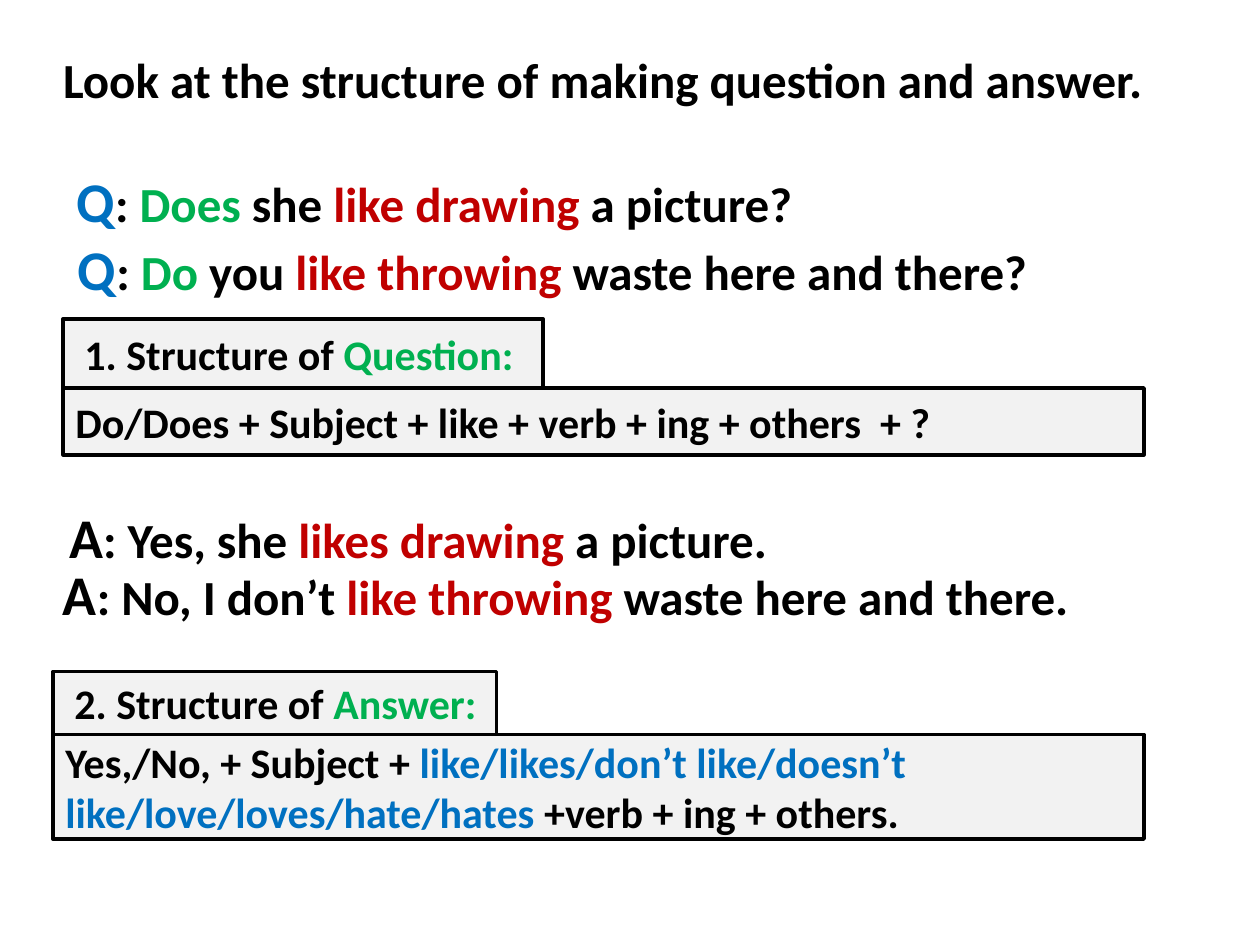
from pptx import Presentation
from pptx.dml.color import RGBColor
from pptx.enum.shapes import MSO_SHAPE
from pptx.enum.text import MSO_ANCHOR, MSO_AUTO_SIZE, PP_ALIGN
from pptx.util import Inches, Pt

FONT = "Calibri"
BLACK, GREEN, RED, BLUE, PALE = "000000", "00B050", "C00000", "0070C0", "F2F2F2"
LETTER_SIZE, SENTENCE_SIZE, RULE_SIZE = 32, 28, 24
INSET, HEADING_INSET = 0.1, 0.17
RIGHT_EDGE = 9.08


def color(hex_code):
    return RGBColor.from_string(hex_code)


def write(box, spans, inset=INSET):
    """Fill a box with one line of (text, size, colour) spans."""
    frame = box.text_frame
    frame.word_wrap = True
    frame.auto_size = MSO_AUTO_SIZE.NONE
    frame.vertical_anchor = MSO_ANCHOR.MIDDLE
    frame.margin_left = Inches(inset)
    para = frame.paragraphs[0]
    para.alignment = PP_ALIGN.LEFT
    for text, size, hex_code in spans:
        span = para.add_run()
        span.text = text
        span.font.name = FONT
        span.font.size = Pt(size)
        span.font.bold = True
        span.font.color.rgb = color(hex_code)


def add_title(page, text):
    title = page.shapes.title
    title.left, title.top = Inches(0.4), Inches(0.17)
    title.width, title.height = Inches(9.19), Inches(0.92)
    write(title, [(text, SENTENCE_SIZE, BLACK)])


def add_sentence(page, left, top, height, letter, letter_color, parts):
    """Add an example sentence that opens with a larger letter."""
    box = page.shapes.add_textbox(
        Inches(left), Inches(top), Inches(8.42), Inches(height))
    write(box, [(letter, LETTER_SIZE, letter_color)]
          + [(text, SENTENCE_SIZE, shade) for text, shade in parts])


def add_panel(page, left, top, width, height, parts, inset=INSET):
    panel = page.shapes.add_shape(
        MSO_SHAPE.RECTANGLE,
        Inches(left), Inches(top), Inches(width), Inches(height))
    panel.shadow.inherit = False
    panel.fill.solid()
    panel.fill.fore_color.rgb = color(PALE)
    panel.line.color.rgb = color(BLACK)
    panel.line.width = Pt(2)
    write(panel, [(text, RULE_SIZE, shade) for text, shade in parts], inset)


def add_rule(page, left, top, heading_size, rule_height, heading, rule):
    """Add a heading panel with the full-width rule panel right below it."""
    width, height = heading_size
    add_panel(page, left, top, width, height, heading, HEADING_INSET)
    add_panel(page, left, top + height, RIGHT_EDGE - left, rule_height, rule)


def main():
    deck = Presentation()
    deck.slide_width, deck.slide_height = Inches(10), Inches(7.5)
    page = deck.slides.add_slide(deck.slide_layouts[5])

    add_title(page, "Look at the structure of making question and answer.")

    add_sentence(page, 0.51, 1.25, 0.67, "Q", BLUE, [
        (": ", BLACK), ("Does", GREEN), (" she ", BLACK),
        ("like drawing ", RED), ("a picture?", BLACK)])
    add_sentence(page, 0.52, 1.83, 0.59, "Q", BLUE, [
        (": ", BLACK), ("Do", GREEN), (" you ", BLACK),
        ("like throwing ", RED), ("waste here and there?", BLACK)])
    add_rule(page, 0.5, 2.53, (3.81, 0.55), 0.53,
             [("1. Structure of ", BLACK), ("Question:", GREEN)],
             [("Do/Does + Subject + like + verb + ing + others  + ?", BLACK)])

    add_sentence(page, 0.45, 3.92, 0.67, "A", BLACK, [
        (": Yes, she ", BLACK), ("likes drawing ", RED), ("a picture.", BLACK)])
    add_sentence(page, 0.4, 4.42, 0.58, "A", BLACK, [
        (": No, I don’t ", BLACK), ("like throwing ", RED),
        ("waste here and there.", BLACK)])
    add_rule(page, 0.42, 5.33, (3.52, 0.5), 0.83,
             [("2. Structure of ", BLACK), ("Answer:", GREEN)],
             [("Yes,/No, + Subject + ", BLACK),
              ("like/likes/don’t like/doesn’t like/love/loves/hate/hates ", BLUE),
              ("+verb + ing + others.", BLACK)])

    deck.save("out.pptx")


if __name__ == "__main__":
    main()
